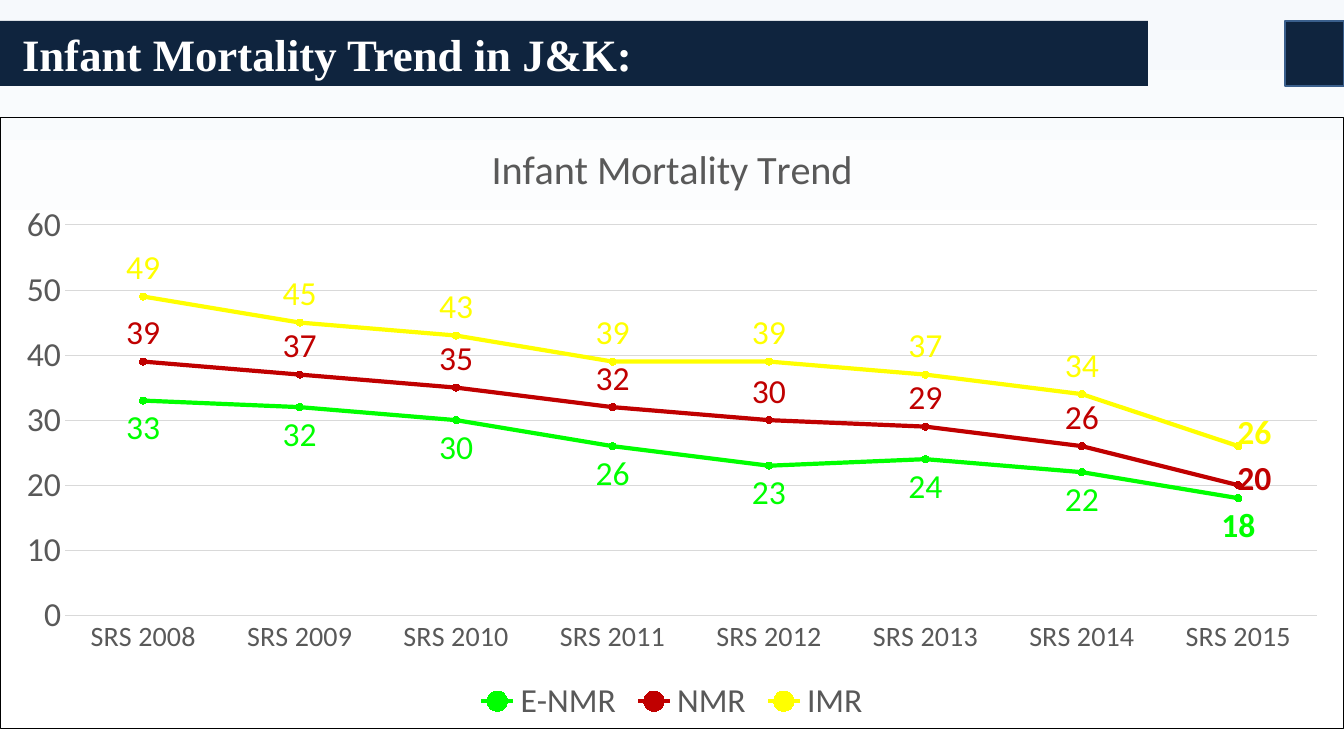
from lxml import etree
from pptx import Presentation
from pptx.chart.data import CategoryChartData
from pptx.dml.color import RGBColor
from pptx.enum.chart import (XL_CHART_TYPE, XL_LABEL_POSITION, XL_LEGEND_POSITION,
                             XL_MARKER_STYLE, XL_TICK_MARK)
from pptx.enum.shapes import MSO_SHAPE
from pptx.enum.text import MSO_ANCHOR, MSO_AUTO_SIZE, PP_ALIGN
from pptx.oxml import parse_xml
from pptx.oxml.ns import nsdecls, qn
from pptx.util import Pt

ABOVE, BELOW = XL_LABEL_POSITION.ABOVE, XL_LABEL_POSITION.BELOW
NO_TICK = XL_TICK_MARK.NONE

# Content
TITLE = "Infant Mortality Trend in J&K:"
CHART_TITLE = "Infant Mortality Trend"
YEARS = [f"SRS {year}" for year in range(2008, 2016)]
# name, values, colour, label position, px shift of the last label
SERIES = [
    ("E-NMR", (33, 32, 30, 26, 23, 24, 22, 18), "green", BELOW, None),
    ("NMR", (39, 37, 35, 32, 30, 29, 26, 20), "red", ABOVE, (16, 22)),
    ("IMR", (49, 45, 43, 39, 39, 37, 34, 26), "yellow", ABOVE, (16, 15)),
]
COLORS = {
    "navy": "0F243E", "edge": "3A5F8C", "white": "FFFFFF", "mist": "F6F9FC",
    "gray": "595959", "grid": "D9D9D9", "black": "000000",
    "green": "00FF00", "red": "C00000", "yellow": "FFFF00",
}

# Geometry in px (left, top, width, height)
SLIDE = (1344, 756)
BAND = (0, 21, 1148, 65)
CORNER = (1285, 21, 59, 65)
TITLE_BOX = (12, 21, 917, 65)
CHART_BOX = (0, 117, 1344, 612)
PLOT_BOX = (65, 108, 1252, 391)  # inside the chart


def emu(px):
    return round(px * 914400 / 100.8)


def color(name):
    return RGBColor.from_string(COLORS[name])


def set_font(font, size, color_name, name="Calibri", bold=False):
    font.size, font.name, font.bold = Pt(size), name, bold
    font.color.rgb = color(color_name)


def set_line(line, color_name, width):
    line.color.rgb = color(color_name)
    line.width = Pt(width)


def manual_layout(values, inner=False):
    layout = etree.Element(qn("c:layout"))
    manual = etree.SubElement(layout, qn("c:manualLayout"))
    settings = []
    if inner:
        settings = [("layoutTarget", "inner"), ("xMode", "edge"), ("yMode", "edge")]
    settings += zip("xywh", values)
    for tag, value in settings:
        etree.SubElement(manual, qn(f"c:{tag}"), val=str(value))
    return layout


def add_block(slide, box):
    block = slide.shapes.add_shape(MSO_SHAPE.RECTANGLE, *map(emu, box))
    block.shadow.inherit = False
    block.fill.solid()
    block.fill.fore_color.rgb = color("navy")
    block.line.fill.background()
    return block


def add_trend_chart(slide):
    data = CategoryChartData()
    data.categories = YEARS
    for name, values, *_ in SERIES:
        data.add_series(name, values)
    chart = slide.shapes.add_chart(XL_CHART_TYPE.LINE_MARKERS,
                                   *map(emu, CHART_BOX), data).chart
    set_font(chart.font, 24, "black")

    # Title and legend
    chart.has_title = True
    chart.chart_title.include_in_layout = False
    chart.chart_title.text_frame.text = CHART_TITLE
    set_font(chart.chart_title.text_frame.paragraphs[0].font, 28.8, "gray")
    chart.has_legend = True
    chart.legend.position = XL_LEGEND_POSITION.BOTTOM
    chart.legend.include_in_layout = False
    set_font(chart.legend.font, 24, "gray")

    # Axes
    for axis, size in ((chart.category_axis, 20), (chart.value_axis, 24)):
        axis.major_tick_mark = axis.minor_tick_mark = NO_TICK
        set_font(axis.tick_labels.font, size, "gray")
    set_line(chart.category_axis.format.line, "grid", 0.75)
    value_axis = chart.value_axis
    value_axis.minimum_scale, value_axis.maximum_scale = 0, 60
    value_axis.major_unit = 10
    value_axis.format.line.fill.background()
    set_line(value_axis.major_gridlines.format.line, "grid", 0.75)

    # Series and labels
    chart.plots[0].vary_by_categories = False
    width, height = CHART_BOX[2:]
    for series, (_, values, tint, position, shift) in zip(chart.plots[0].series, SERIES):
        series.smooth = False
        set_line(series.format.line, tint, 3)
        marker = series.marker
        marker.style, marker.size = XL_MARKER_STYLE.CIRCLE, 5
        marker.format.fill.solid()
        marker.format.fill.fore_color.rgb = color(tint)
        set_line(marker.format.line, tint, 0.75)
        labels = series.data_labels
        labels.show_value = True
        labels.position = position
        set_font(labels.font, 24, tint)
        last_label = series.points[len(values) - 1].data_label
        set_font(last_label.font, 24, tint, bold=True)
        last_label.position = position
        if shift:
            right, down = shift
            label_xml = next(series._element.iter(qn("c:dLbl")))
            label_xml.insert(1, manual_layout((round(right / width, 3),
                                               round(down / height, 3))))

    # Plot position, clear backgrounds and chart border
    chart_space = chart._chartSpace
    plot_area = next(chart_space.iter(qn("c:plotArea")))
    for layout in plot_area.findall(qn("c:layout")):
        plot_area.remove(layout)
    fractions = [round(px / CHART_BOX[2 + i % 2], 3) for i, px in enumerate(PLOT_BOX)]
    plot_area.insert(0, manual_layout(fractions, inner=True))
    namespaces = nsdecls("c", "a")
    plot_area.append(parse_xml(f"<c:spPr {namespaces}><a:noFill/></c:spPr>"))
    chart_space.find(qn("c:txPr")).addprevious(parse_xml(
        f'<c:spPr {namespaces}><a:noFill/><a:ln w="{Pt(0.75)}"><a:solidFill>'
        f'<a:srgbClr val="{COLORS["black"]}"/></a:solidFill></a:ln></c:spPr>'))


def main():
    presentation = Presentation()
    presentation.slide_width, presentation.slide_height = map(emu, SLIDE)
    slide = presentation.slides.add_slide(presentation.slide_layouts[5])

    # Background
    background = slide.background.fill
    background.gradient()
    background.gradient_angle = 270
    for stop, position, name in zip(background.gradient_stops, (0, 0.37), ("mist", "white")):
        stop.position = position
        stop.color.rgb = color(name)

    add_block(slide, BAND)
    add_trend_chart(slide)

    # Title, in front of its band
    title = slide.shapes.title
    title.left, title.top, title.width, title.height = map(emu, TITLE_BOX)
    title.text_frame.text = TITLE
    title.text_frame.auto_size = MSO_AUTO_SIZE.NONE
    title.text_frame.vertical_anchor = MSO_ANCHOR.MIDDLE
    paragraph = title.text_frame.paragraphs[0]
    paragraph.alignment = PP_ALIGN.LEFT
    set_font(paragraph.font, 32, "white", "Times New Roman", bold=True)
    slide.shapes._spTree.append(title._element)

    corner = add_block(slide, CORNER)
    set_line(corner.line, "edge", 2)
    presentation.save("out.pptx")


if __name__ == "__main__":
    main()
